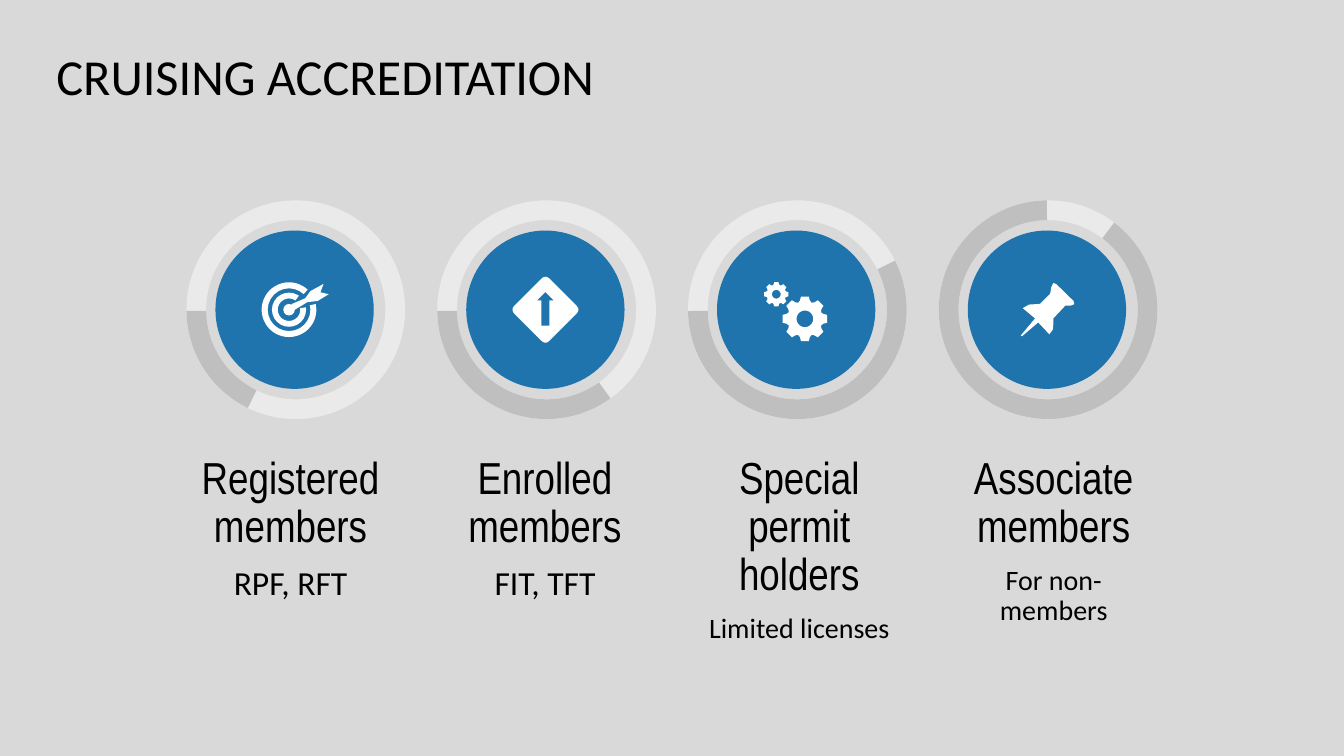
import dataclasses
import math

import pptx
import pptx.dml.color
import pptx.enum.shapes
import pptx.enum.text
import pptx.util

Cm = pptx.util.Cm
Preset = pptx.enum.shapes.MSO_SHAPE
Align = pptx.enum.text.PP_ALIGN


@dataclasses.dataclass(frozen=True)
class Theme:
    backdrop: str = "D9D9D9"
    ring: str = "EAEAEA"
    arc: str = "BFBFBF"
    accent: str = "1F74AD"
    icon: str = "FFFFFF"
    ink: str = "000000"
    body_font: str = "Calibri"
    label_font: str = "Arial Narrow"
    title_size: int = 36
    label_size: int = 32
    detail_size: int = 24
    small_detail_size: int = 20


THEME = Theme()
RING_SIZE = 5.51
DISC_SIZE = 3.99

ARROW = [(0.7, -0.65), (0.62, -0.44), (0.83, -0.39), (0.55, -0.22), (0.29, -0.19),
         (-0.04, 0.01), (-0.11, -0.14), (0.24, -0.29), (0.37, -0.47)]
PIN = [(-0.69, 0.65), (-0.33, 0.22), (-0.64, -0.04), (-0.48, -0.13), (-0.3, -0.14),
       (-0.2, -0.15), (0.05, -0.4), (0.08, -0.57), (0.13, -0.67), (0.2, -0.65),
       (0.64, -0.22), (0.66, -0.14), (0.56, -0.1), (0.43, -0.1), (0.13, 0.22),
       (0.13, 0.37), (0.12, 0.5), (0.03, 0.62), (-0.25, 0.32), (-0.66, 0.67)]


def paint(shape, color):
    shape.shadow.inherit = False
    shape.fill.solid()
    shape.fill.fore_color.rgb = pptx.dml.color.RGBColor.from_string(color)
    shape.line.fill.background()


def add_centred(slide, preset, x, y, width, height, color, adjustments=()):
    """Add a preset shape whose middle is at x, y."""
    shape = slide.shapes.add_shape(preset, Cm(x - width / 2), Cm(y - height / 2),
                                   Cm(width), Cm(height))
    for index, value in enumerate(adjustments):
        shape.adjustments[index] = value
    paint(shape, color)
    return shape


def add_arc(slide, x, y, size, start, end, thickness, color):
    """Add a ring segment running clockwise between two angles in degrees."""
    add_centred(slide, Preset.BLOCK_ARC, x, y, size, size, color,
                (start * 0.6, end * 0.6, thickness))


def add_outline(slide, x, y, *contours):
    """Add an icon shape from contours given in centimetres around x, y."""
    placed = [[((x + dx) * 1000, (y + dy) * 1000) for dx, dy in contour]
              for contour in contours]
    builder = slide.shapes.build_freeform(*placed[0][0], scale=Cm(0.001))
    builder.add_line_segments(placed[0][1:], close=True)
    for hole in placed[1:]:
        builder.move_to(*hole[0])
        builder.add_line_segments(hole[1:], close=True)
    paint(builder.convert_to_shape(), THEME.icon)


def write(paragraph, text, *, size, font=THEME.body_font, align=Align.CENTER,
          spacing=0.9, after=10):
    paragraph.alignment = align
    paragraph.line_spacing = spacing
    paragraph.space_after = pptx.util.Pt(after)
    run = paragraph.add_run()
    run.text = text
    run.font.size = pptx.util.Pt(size)
    run.font.name = font
    run.font.color.rgb = pptx.dml.color.RGBColor.from_string(THEME.ink)


def polar(radius, degrees):
    angle = math.radians(degrees)
    return radius * math.cos(angle), radius * math.sin(angle)


def draw_target(slide, x, y):
    hub = x - 0.17
    add_arc(slide, hub, y, 1.38, 348, 313, 0.11, THEME.icon)
    add_arc(slide, hub, y, 0.86, 352, 305, 0.17, THEME.icon)
    add_centred(slide, Preset.OVAL, hub, y, 0.29, 0.29, THEME.icon)
    add_outline(slide, x, y, ARROW)


def draw_sign(slide, x, y):
    sign = add_centred(slide, Preset.ROUNDED_RECTANGLE, x - 0.03, y, 1.25, 1.25,
                       THEME.icon, (0.1,))
    sign.rotation = 45
    add_centred(slide, Preset.UP_ARROW, x - 0.03, y - 0.02, 0.41, 0.84,
                THEME.accent, (0.5, 0.5))


def draw_gear(slide, x, y, radius, hole):
    profile = [(-15, 0.84), (-10, 1), (10, 1), (15, 0.84), (22.5, 0.77)]
    rim = [polar(radius * reach, tooth * 45 + turn)
           for tooth in range(8) for turn, reach in profile]
    add_outline(slide, x, y, rim, [polar(hole, -turn) for turn in range(0, 360, 10)])


def draw_gears(slide, x, y):
    draw_gear(slide, x + 0.19, y + 0.23, 0.57, 0.21)
    draw_gear(slide, x - 0.53, y - 0.39, 0.31, 0.11)


def draw_pin(slide, x, y):
    add_outline(slide, x, y, PIN)


def add_title(slide, text, left, top, width, height):
    title = slide.shapes.title
    title.left, title.top, title.width, title.height = map(Cm, (left, top, width, height))
    frame = title.text_frame
    frame.margin_left = frame.margin_right = frame.margin_top = frame.margin_bottom = 0
    frame.vertical_anchor = pptx.enum.text.MSO_ANCHOR.TOP
    frame.auto_size = pptx.enum.text.MSO_AUTO_SIZE.NONE
    write(frame.paragraphs[0], text, size=THEME.title_size, align=Align.LEFT,
          spacing=1.0, after=0)


def add_badge(slide, left, top, arc, draw_icon):
    x, y = left + RING_SIZE / 2, top + RING_SIZE / 2
    add_centred(slide, Preset.OVAL, x - 0.03, y, DISC_SIZE, DISC_SIZE, THEME.accent)
    add_centred(slide, Preset.DONUT, x, y, RING_SIZE, RING_SIZE, THEME.ring, (0.09,))
    add_arc(slide, x, y, RING_SIZE, *arc, 0.09, THEME.arc)
    draw_icon(slide, x, y)


def add_caption(slide, left, top, width, height, label, detail, detail_size):
    caption = slide.shapes.add_textbox(Cm(left), Cm(top), Cm(width), Cm(height))
    frame = caption.text_frame
    frame.word_wrap = True
    frame.auto_size = pptx.enum.text.MSO_AUTO_SIZE.SHAPE_TO_FIT_TEXT
    write(frame.paragraphs[0], label, size=THEME.label_size, font=THEME.label_font)
    write(frame.add_paragraph(), detail, size=detail_size)


def main():
    deck = pptx.Presentation()
    deck.slide_width, deck.slide_height = Cm(33.87), Cm(19.05)
    slide = deck.slides.add_slide(deck.slide_layouts[5])
    backdrop = slide.background.fill
    backdrop.solid()
    backdrop.fore_color.rgb = pptx.dml.color.RGBColor.from_string(THEME.backdrop)
    add_title(slide, "CRUISING ACCREDITATION", 1.42, 1.14, 30.94, 2.97)

    members = [
        ("Registered members", "RPF, RFT", THEME.detail_size, 3.99,
         (116, 179.3), draw_target),
        ("Enrolled members", "FIT, TFT", THEME.detail_size, 3.99,
         (54.2, 179.3), draw_sign),
        ("Special permit holders", "Limited licenses", THEME.small_detail_size, 5.08,
         (333.3, 179.3), draw_gears),
        ("Associate members", "For non-members", THEME.small_detail_size, 4.62,
         (307.2, 269.3), draw_pin),
    ]
    for column, (label, detail, size, height, arc, draw_icon) in enumerate(members):
        add_badge(slide, 4.7 + 6.32 * column, 5.05, arc, draw_icon)
        add_caption(slide, 4.72 + 6.41 * column, 11.35, 5.21, height, label, detail, size)
    deck.save("out.pptx")


if __name__ == "__main__":
    main()
